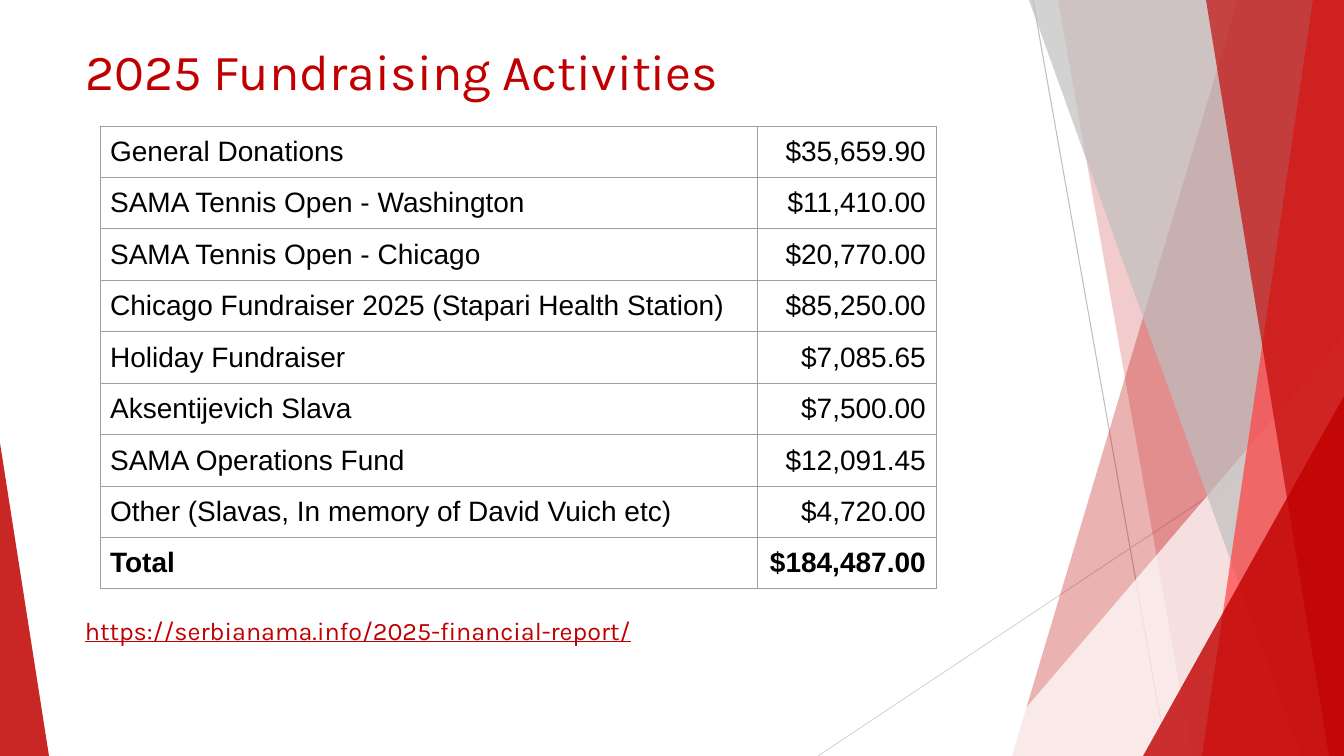
from lxml import etree
from pptx import Presentation
from pptx import util as u
from pptx.dml.color import RGBColor
from pptx.enum import shapes, text
from pptx.oxml.ns import qn

RED = RGBColor(0xC0, 0x00, 0x00)
CORAL = RGBColor(0xFF, 0x3F, 0x40)
GREY = RGBColor(0xBF, 0xBF, 0xBF)
PALE_GREY = RGBColor(0xD8, 0xD8, 0xD8)
BORDER = RGBColor(0x9E, 0x9E, 0x9E)
WHITE = RGBColor(0xFF, 0xFF, 0xFF)
BLACK = RGBColor(0x00, 0x00, 0x00)

TITLE = "2025 Fundraising Activities"
LINK = "https://serbianama.info/2025-financial-report/"
ACTIVITIES = [
    ("General Donations", "$35,659.90"),
    ("SAMA Tennis Open - Washington", "$11,410.00"),
    ("SAMA Tennis Open - Chicago", "$20,770.00"),
    ("Chicago Fundraiser 2025 (Stapari Health Station)", "$85,250.00"),
    ("Holiday Fundraiser", "$7,085.65"),
    ("Aksentijevich Slava", "$7,500.00"),
    ("SAMA Operations Fund", "$12,091.45"),
    ("Other (Slavas, In memory of David Vuich etc)", "$4,720.00"),
    ("Total", "$184,487.00"),
]

WIDTH, HEIGHT = 1344, 756
COLUMNS, ROW = (657, 179), 51
LINES = [((1033, 0), (1167, HEIGHT), GREY), ((WIDTH, 406), (818, HEIGHT), PALE_GREY)]
# Back to front. Band: left x at top, left x at bottom. Triangle: left, top, width, apex.
DECOR = [
    ("band", (1238, 1012), RED, 30),
    ("band", (1058, 1192), RED, 20),
    ("triangle", (985, 336, 359, 1), WHITE, 72),
    ("band", (1029, 1301), GREY, 70),
    ("band", (1313, 1202), CORAL, 70),
    ("band", (1206, 1329), RED, 65),
    ("triangle", (1143, 396, 201, 1), RED, 80),
    ("triangle", (0, 443, 49, 0), RED, 85),
]

SCALE = 914400 / 100.8


def px(*lengths):
    return [u.Emu(round(n * SCALE)) for n in lengths]


def write(tf, content, align=text.PP_ALIGN.LEFT, **font):
    p = tf.paragraphs[0]
    p.alignment = align
    r = p.add_run()
    r.text = content
    r.font.color.rgb = font.pop("color")
    for name, value in font.items():
        setattr(r.font, name, value)


def set_frame(tf):
    values = dict(word_wrap=True, auto_size=text.MSO_AUTO_SIZE.NONE,
                  vertical_anchor=text.MSO_ANCHOR.TOP)
    for name, value in values.items():
        setattr(tf, name, value)


def add_line(s, start, end, color):
    line = s.shapes.add_connector(shapes.MSO_CONNECTOR.STRAIGHT, *px(*start, *end))
    line.line.color.rgb = color
    line.line.width = u.Pt(0.75)
    etree.SubElement(line.element.spPr, qn("a:effectLst"))


def add_decor(s, kind, geometry, color, opacity):
    if kind == "band":
        top_x, bottom_x = geometry
        outline = s.shapes.build_freeform(top_x, 0, scale=SCALE)
        outline.add_line_segments([(WIDTH, 0), (WIDTH, HEIGHT), (bottom_x, HEIGHT)])
        sp = outline.convert_to_shape()
    else:
        left, top, width, apex = geometry
        sp = s.shapes.add_shape(shapes.MSO_SHAPE.ISOSCELES_TRIANGLE,
                                *px(left, top, width, HEIGHT - top))
        sp.adjustments[0] = apex
    sp.shadow.inherit = False
    sp.line.fill.background()
    sp.fill.solid()
    sp.fill.fore_color.rgb = color
    rgb = sp.element.spPr.find(qn("a:solidFill")).find(qn("a:srgbClr"))
    etree.SubElement(rgb, qn("a:alpha"), val=str(opacity * 1000))


def add_borders(cell):
    tcPr = cell._tc.get_or_add_tcPr()
    for i, side in enumerate(("lnL", "lnR", "lnT", "lnB")):
        ln = etree.Element(qn(f"a:{side}"), w=str(u.Pt(0.75)))
        fill = etree.SubElement(ln, qn("a:solidFill"))
        etree.SubElement(fill, qn("a:srgbClr"), val=str(BORDER))
        tcPr.insert(i, ln)


def add_activities(s):
    table = s.shapes.add_table(len(ACTIVITIES), len(COLUMNS),
                               *px(100, 126, sum(COLUMNS), ROW * len(ACTIVITIES))).table
    table.first_row = table.horz_banding = False
    for column, width in zip(table.columns, px(*COLUMNS)):
        column.width = width
    for i, row in enumerate(ACTIVITIES):
        for j, content in enumerate(row):
            cell = table.cell(i, j)
            for side in ("left", "right", "top", "bottom"):
                setattr(cell, f"margin_{side}", u.Inches(0.1))
            cell.fill.background()
            add_borders(cell)
            write(cell.text_frame, content,
                  text.PP_ALIGN.RIGHT if j else text.PP_ALIGN.LEFT,
                  name="Arial", size=u.Pt(20), color=BLACK, bold=row[0] == "Total")


def main():
    prs = Presentation()
    prs.slide_width, prs.slide_height = px(WIDTH, HEIGHT)
    s = prs.slides.add_slide(prs.slide_layouts[5])
    for line in LINES:
        add_line(s, *line)
    for decor in DECOR:
        add_decor(s, *decor)

    title = s.shapes.title
    title.left, title.top, title.width, title.height = px(75, 35, 948, 110)
    set_frame(title.text_frame)
    write(title.text_frame, TITLE, name="Karla", size=u.Pt(36), color=RED)

    add_activities(s)

    link = s.shapes.add_textbox(*px(75, 610, 948, 103))
    set_frame(link.text_frame)
    write(link.text_frame, LINK, name="Karla", size=u.Pt(18), color=RED, underline=True)
    prs.save("out.pptx")


if __name__ == "__main__":
    main()
